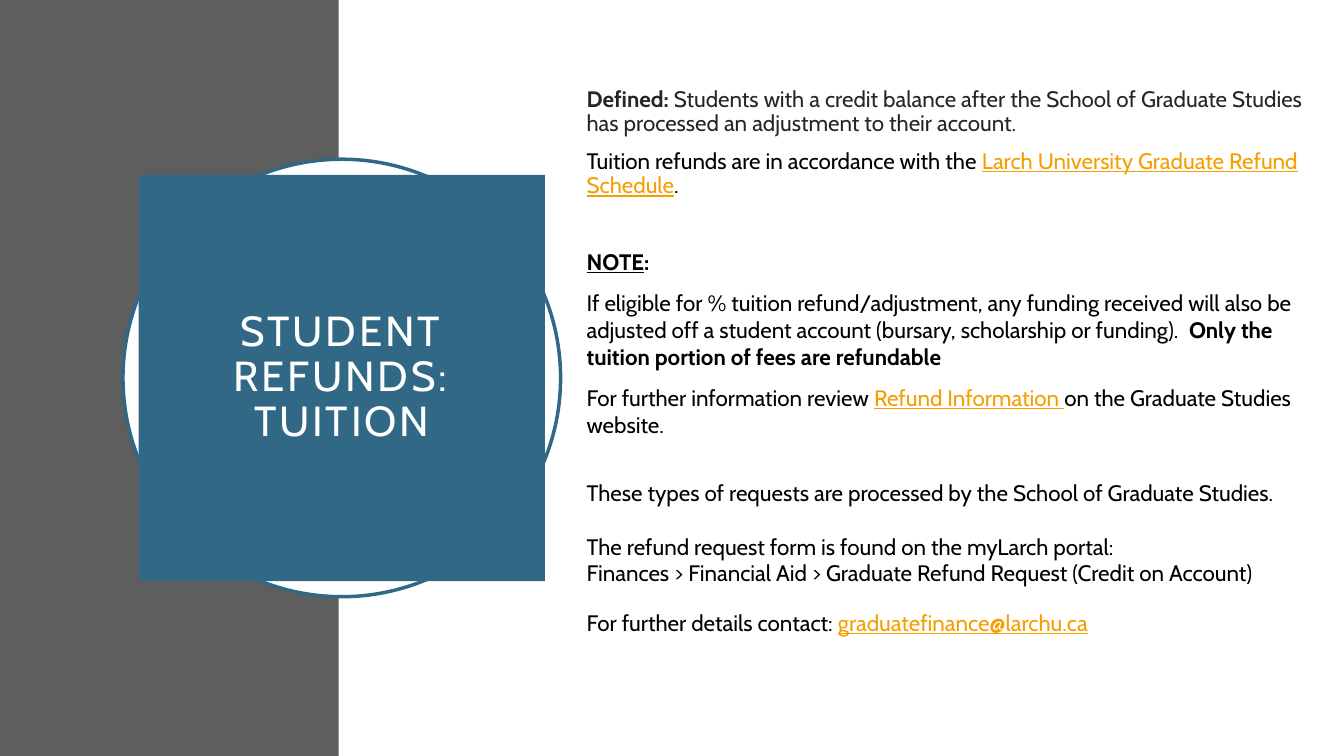
from pptx import Presentation
from pptx.dml.color import RGBColor
from pptx.enum.shapes import MSO_SHAPE
from pptx.enum.text import MSO_ANCHOR, PP_ALIGN
from pptx.util import Inches, Pt

THEME = {
    "font": "Cabin",
    "title_size": 30,
    "body_size": 16,
    "white": "FFFFFF",
    "gray": "5E5E5E",
    "blue": "316886",
    "dark": "262626",
    "black": "000000",
    "link": "F59E00",
}

STYLES = {
    "lead": ("dark", True, False),
    "intro": ("dark", False, False),
    "plain": ("black", False, False),
    "bold": ("black", True, False),
    "heading": ("black", True, True),
    "link": ("link", False, True),
}

TITLE = "STUDENT REFUNDS: TUITION"

# line spacing, space before, space after, runs
BODY = [
    (0.9, 10, 0, [
        ("Defined: ", "lead"),
        ("Students with a credit balance after the School of Graduate Studies "
         "has processed an adjustment to their account.", "intro"),
    ]),
    (0.9, 10, 0, [
        ("Tuition refunds are in accordance with the ", "plain"),
        ("Larch University Graduate Refund Schedule", "link"),
        (".", "plain"),
    ]),
    (0.9, 37.4, 0, [("NOTE", "heading"), (":", "bold")]),
    (1, 10, 0, [
        ("If eligible for % tuition refund/adjustment, any funding received "
         "will also be adjusted off a student account (bursary, scholarship "
         "or funding).  ", "plain"),
        ("Only the tuition portion of fees are refundable", "bold"),
    ]),
    (1, 10, 0, [
        ("For further information review ", "plain"),
        ("Refund Information ", "link"),
        ("on the Graduate Studies website.", "plain"),
    ]),
    (1, 29.4, 0, [
        ("These types of requests are processed by the School of Graduate "
         "Studies.", "plain"),
    ]),
    (1, 19.4, 0, [
        ("The refund request form is found on the myLarch portal:", "plain"),
    ]),
    (1, 0, 6, [
        ("Finances > Financial Aid > Graduate Refund Request (Credit on "
         "Account)", "plain"),
    ]),
    (1, 10, 6, [
        ("For further details contact: ", "plain"),
        ("graduatefinance@larchu.ca", "link"),
    ]),
]


def color(name):
    return RGBColor.from_string(THEME[name])


def add_panel(s, kind, left, top, width, height, fill, line=None):
    sp = s.shapes.add_shape(kind, Inches(left), Inches(top),
                            Inches(width), Inches(height))
    sp.shadow.inherit = False
    sp.fill.solid()
    sp.fill.fore_color.rgb = color(fill)
    if line:
        sp.line.color.rgb = color(line)
        sp.line.width = Pt(2.5)
    else:
        sp.line.fill.background()
    return sp


def add_run(p, text, size, name, bold=False, underline=False):
    r = p.add_run()
    r.text = text
    r.font.name = THEME["font"]
    r.font.size = Pt(THEME[size])
    r.font.color.rgb = color(name)
    r.font.bold = bold
    r.font.underline = underline
    return r


def add_title(s):
    center_x, center_y = 3.39, 3.75
    ring, square, inset = 4.34, 4.03, 0.79
    add_panel(s, MSO_SHAPE.OVAL, center_x - ring / 2, center_y - ring / 2,
              ring, ring, "white", "blue")
    sp = add_panel(s, MSO_SHAPE.RECTANGLE, center_x - square / 2,
                   center_y - square / 2, square, square, "blue")
    tf = sp.text_frame
    tf.word_wrap = True
    tf.vertical_anchor = MSO_ANCHOR.MIDDLE
    tf.margin_left = tf.margin_right = Inches(inset)
    p = tf.paragraphs[0]
    p.alignment = PP_ALIGN.CENTER
    p.line_spacing = 0.9
    r = add_run(p, TITLE, "title_size", "white")
    r._r.get_or_add_rPr().set("spc", "200")


def add_body(s):
    sp = s.shapes.add_textbox(Inches(5.72), Inches(0.41),
                              Inches(7.41), Inches(6.36))
    tf = sp.text_frame
    tf.word_wrap = True
    tf.vertical_anchor = MSO_ANCHOR.MIDDLE
    for i, (spacing, before, after, runs) in enumerate(BODY):
        p = tf.add_paragraph() if i else tf.paragraphs[0]
        p.line_spacing = spacing
        p.space_before = Pt(before)
        p.space_after = Pt(after)
        for text, style in runs:
            add_run(p, text, "body_size", *STYLES[style])


def main():
    prs = Presentation()
    prs.slide_width, prs.slide_height = Inches(13.33), Inches(7.5)
    s = prs.slides.add_slide(prs.slide_layouts[6])
    add_panel(s, MSO_SHAPE.RECTANGLE, 0, 0, 3.36, 7.5, "gray")
    add_title(s)
    add_body(s)
    prs.save("out.pptx")


if __name__ == "__main__":
    main()
